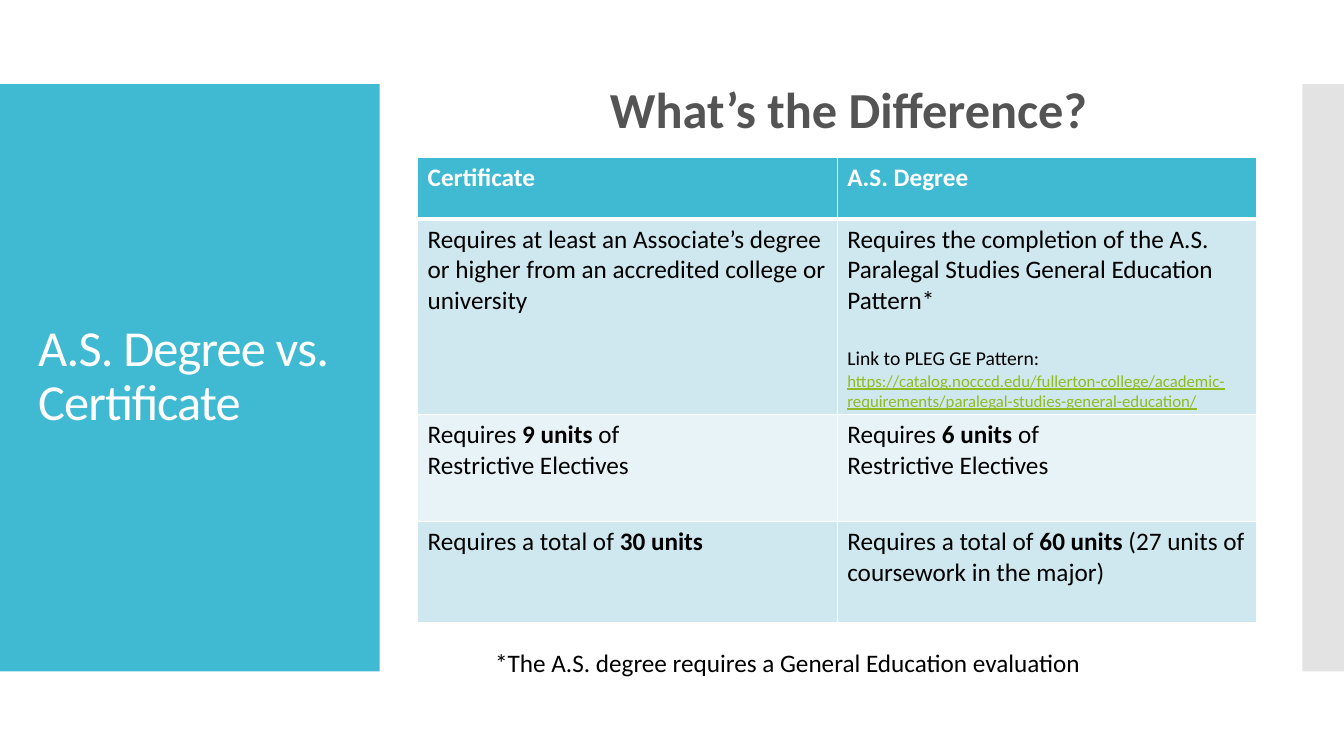
from pptx import Presentation
from pptx.dml.color import RGBColor
from pptx.enum import shapes, text
from pptx.oxml import parse_xml
from pptx.oxml.ns import nsdecls
from pptx.util import Pt

HUES = {
    "teal": "40BAD2", "gray": "C8C8C8", "head": "545454", "white": "FFFFFF",
    "black": "000000", "link": "90BB23", "dark": "CFE7EE", "light": "E8F3F7",
}


def hue(name):
    return RGBColor.from_string(HUES[name])


def write(para, words, size, color, bold=False):
    for i, part in enumerate(words.split("|")):
        run = para.add_run()
        run.text = part
        run.font.name = "Calibri"
        run.font.size = Pt(size)
        run.font.bold = bold or i % 2 == 1
        run.font.color.rgb = hue(color)


deck = Presentation()
deck.slide_width, deck.slide_height = Pt(960), Pt(540)
slide = deck.slides.add_slide(deck.slide_layouts[5])

for left, width, color in [(0, 271.2, "teal"), (930.4, 29.6, "gray")]:
    panel = slide.shapes.add_shape(
        shapes.MSO_SHAPE.RECTANGLE, Pt(left), Pt(60), Pt(width), Pt(419.5))
    panel.shadow.inherit = False
    panel.fill.solid()
    panel.fill.fore_color.rgb = hue(color)
    panel.line.fill.background()
    if color == "gray":
        tint = panel.element.spPr.find(".//{*}srgbClr")
        tint.append(parse_xml(f'<a:alpha {nsdecls("a")} val="50000"/>'))

title = slide.shapes.title
title.element.getparent().append(title.element)
title.left, title.top, title.width, title.height = Pt(20), Pt(88.5), Pt(232), Pt(362)
title.text_frame.word_wrap = True
title.text_frame.auto_size = text.MSO_AUTO_SIZE.NONE
title.text_frame.vertical_anchor = text.MSO_ANCHOR.MIDDLE
para = title.text_frame.paragraphs[0]
para.alignment = text.PP_ALIGN.LEFT
para.line_spacing = 0.9
write(para, "A.S. Degree vs. Certificate", 36, "white")
para.runs[0].font.element.set("spc", "-60") if hasattr(para.runs[0].font, "element") else \
    para.runs[0]._r.get_or_add_rPr().set("spc", "-60")

notes = [
    ("What’s the Difference?", 288, 52.5, 636.5, 94, 36, "head", True),
    ("*The A.S. degree requires a General Education evaluation",
     346.5, 458.8, 594.5, 29, 18, "black", False),
]
for words, left, top, width, height, size, color, bold in notes:
    box = slide.shapes.add_textbox(Pt(left), Pt(top), Pt(width), Pt(height))
    box.text_frame.word_wrap = True
    para = box.text_frame.paragraphs[0]
    para.alignment = text.PP_ALIGN.CENTER if bold else text.PP_ALIGN.LEFT
    write(para, words, size, color, bold)

rows = [
    (44, "teal", ["Certificate"], ["A.S. Degree"]),
    (139, "dark",
     ["Requires at least an Associate’s degree or higher from an accredited college or university"],
     ["Requires the completion of the A.S. Paralegal Studies General Education Pattern*",
      "Link to PLEG GE Pattern:",
      "https://catalog.nocccd.edu/fullerton-college/academic-requirements/paralegal-studies-general-education/"]),
    (76.5, "light",
     ["Requires |9 units |of", "Restrictive Electives"],
     ["Requires |6 units |of", "Restrictive Electives"]),
    (72, "dark",
     ["Requires a total of |30 units"],
     ["Requires a total of |60 units |(27 units of coursework in the major)"]),
]
high = sum(row[0] for row in rows)
grid = slide.shapes.add_table(len(rows), 2, Pt(298.3), Pt(112.5), Pt(599.5), Pt(high)).table

for r, (tall, fill, *cells) in enumerate(rows):
    grid.rows[r].height = Pt(tall)
    for c, lines in enumerate(cells):
        cell = grid.cell(r, c)
        frame = cell.text_frame
        for i, words in enumerate(lines):
            para = frame.add_paragraph() if i else frame.paragraphs[0]
            if words.startswith("https"):
                write(para, words, 12, "link")
                para.runs[0].font.underline = True
            elif words.startswith("Link"):
                para.space_before = Pt(22)
                write(para, words, 14, "black")
            else:
                write(para, words, 18, "black" if r else "white", r == 0)
        props = cell._tc.get_or_add_tcPr()
        for side in ("lnL", "lnR", "lnT", "lnB"):
            thick = 3 if (r, side) in [(0, "lnB"), (1, "lnT")] else 1
            props.append(parse_xml(
                f'<a:{side} {nsdecls("a")} w="{Pt(thick)}"><a:solidFill>'
                f'<a:srgbClr val="{HUES["white"]}"/></a:solidFill></a:{side}>'))
        cell.fill.solid()
        cell.fill.fore_color.rgb = hue(fill)

deck.save("out.pptx")
